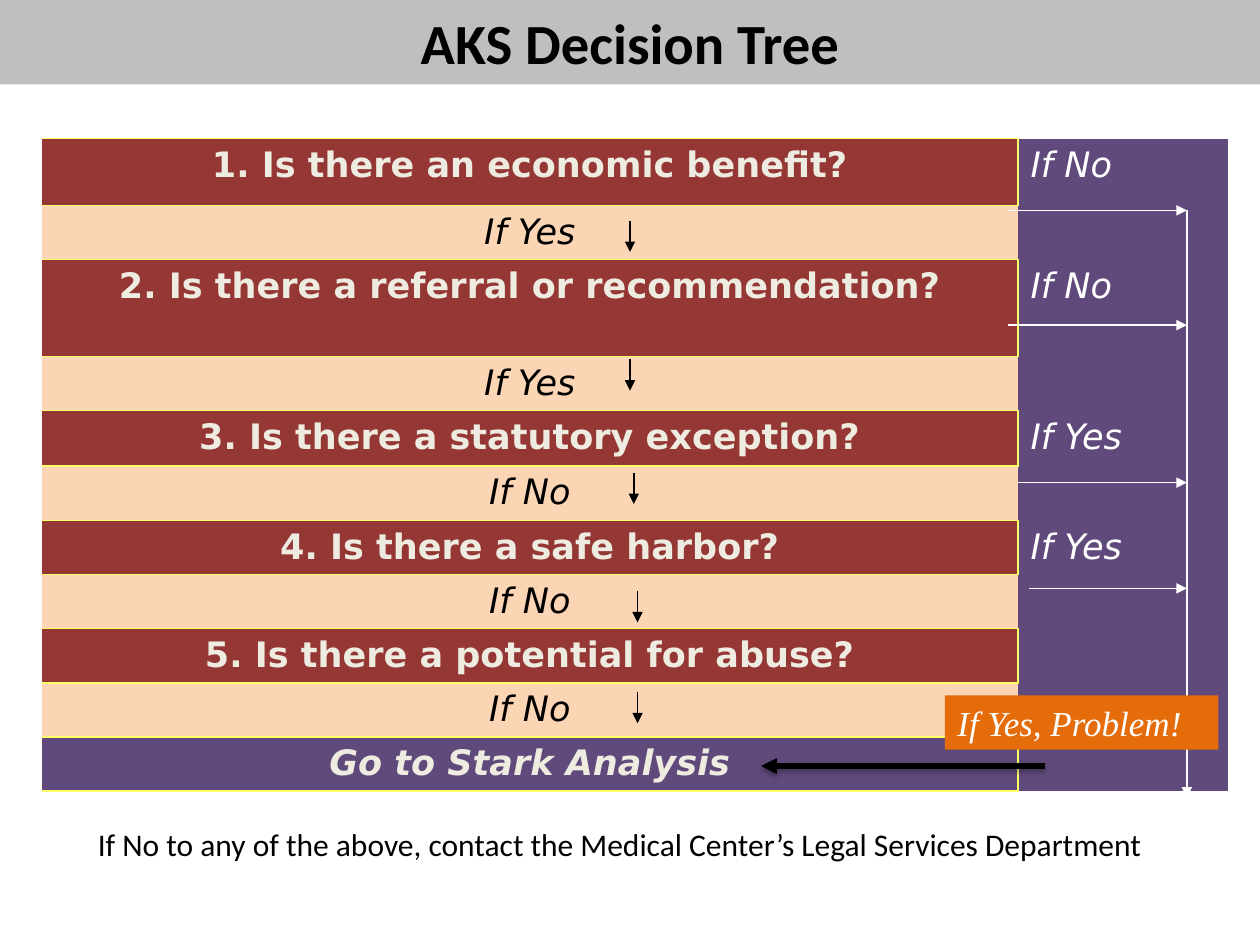
from lxml import etree
from pptx import Presentation
from pptx.dml.color import RGBColor
from pptx.enum.shapes import MSO_CONNECTOR, MSO_SHAPE
from pptx.enum.text import MSO_ANCHOR, PP_ALIGN
from pptx.oxml.ns import qn
from pptx.util import Inches, Pt

LEFT, CENTER = PP_ALIGN.LEFT, PP_ALIGN.CENTER
TOP, MIDDLE = MSO_ANCHOR.TOP, MSO_ANCHOR.MIDDLE

# Content
TITLE = "AKS Decision Tree"
FOOTNOTE = ("If No to any of the above, contact the Medical Center’s "
            "Legal Services Department")
CALLOUT = "If Yes, Problem!"
ROWS = [  # kind, step, side exit, height
    ("question", "1. Is there an economic benefit?", "If No", 0.53),
    ("answer", "If Yes", "", 0.43),
    ("question", "2. Is there a referral or recommendation?", "If No", 0.77),
    ("answer", "If Yes", "", 0.43),
    ("question", "3. Is there a statutory exception?", "If Yes", 0.44),
    ("answer", "If No", "", 0.43),
    ("question", "4. Is there a safe harbor?", "If Yes", 0.43),
    ("answer", "If No", "", 0.43),
    ("question", "5. Is there a potential for abuse?", "", 0.43),
    ("answer", "If No", "", 0.43),
    ("result", "Go to Stark Analysis", "", 0.43),
]
COLUMNS = [7.75, 1.67]
DOWN_ARROWS = [(5, 1.75), (5, 2.85), (5.03, 3.75), (5.06, 4.69), (5.06, 5.49)]
EXIT_ARROWS = [(8, 1.67), (8, 2.58), (8.08, 3.83), (8.17, 4.67)]
EXIT_X, EXIT_BOTTOM = 9.42, 6.33
DOWN_LENGTH = 0.25

# Colours and formats
WHITE, BLACK, CREAM = "FFFFFF", "000000", "EEECE1"
PURPLE, YELLOW, ORANGE, GREY = "604A7B", "FFFF66", "E46C0A", "BFBFBF"
CELL_FONT = {"name": "DejaVu Sans", "size": Pt(20)}
STYLES = {  # fill, text colour, font, yellow borders
    "question": ("953735", CREAM, {"bold": True, "italic": False}, "RTB"),
    "answer": ("FCD5B5", BLACK, {"bold": False, "italic": True}, "TB"),
    "result": (PURPLE, CREAM, {"bold": True, "italic": True}, "RTB"),
}
SIDE_FONT = {"bold": False, "italic": True}


def color(value):
    return RGBColor.from_string(value)


def paint(target, value):
    target.fill.solid()
    target.fill.fore_color.rgb = color(value)


def write(frame, text, font, text_color, align=LEFT):
    paragraph = frame.paragraphs[0]
    paragraph.alignment = align
    run = paragraph.add_run()
    run.text = text
    for name, value in font.items():
        setattr(run.font, name, value)
    run.font.color.rgb = color(text_color)


def set_borders(cell, yellow_sides):
    properties = cell._tc.get_or_add_tcPr()
    for side in "LRTB":
        line = etree.SubElement(properties, qn("a:ln" + side), w=str(Pt(1)))
        if side in yellow_sides:
            fill = etree.SubElement(line, qn("a:solidFill"))
            etree.SubElement(fill, qn("a:srgbClr"), val=YELLOW)
        else:
            etree.SubElement(line, qn("a:noFill"))


def add_arrow(start, end, line_color, width=1, shadow=False):
    points = [Inches(value) for value in (*start, *end)]
    arrow = slide.shapes.add_connector(MSO_CONNECTOR.STRAIGHT, *points)
    arrow.line.color.rgb = color(line_color)
    arrow.line.width = Pt(width)
    etree.SubElement(arrow.line._get_or_add_ln(), qn("a:tailEnd"), type="triangle")
    effects = etree.SubElement(arrow._element.spPr, qn("a:effectLst"))
    if shadow:
        outer = etree.SubElement(effects, qn("a:outerShdw"), blurRad=str(Pt(3.1)),
                                 dist=str(Pt(1.8)), dir="5400000", rotWithShape="0")
        shade = etree.SubElement(outer, qn("a:srgbClr"), val=BLACK)
        etree.SubElement(shade, qn("a:alpha"), val="35000")


presentation = Presentation()
presentation.slide_width, presentation.slide_height = Inches(10), Inches(7.5)
slide = presentation.slides.add_slide(presentation.slide_layouts[5])

# Title band
title = slide.shapes.title
title.left, title.top, title.width, title.height = 0, 0, Inches(10), Inches(0.67)
paint(title, GREY)
title.text_frame.vertical_anchor = MIDDLE
write(title.text_frame, TITLE, {"name": "Calibri", "size": Pt(32.4), "bold": True},
      BLACK, CENTER)

# Decision table
table = slide.shapes.add_table(
    len(ROWS), len(COLUMNS), Inches(0.33), Inches(1.1),
    Inches(sum(COLUMNS)), Inches(sum(row[-1] for row in ROWS))).table
table.first_row = table.horz_banding = False
for column, width in zip(table.columns, COLUMNS):
    column.width = Inches(width)
for index, (kind, step, side_exit, height) in enumerate(ROWS):
    table.rows[index].height = Inches(height)
    fill, text_color, font, borders = STYLES[kind]
    step_cell, side_cell = table.cell(index, 0), table.cell(index, 1)
    set_borders(step_cell, borders)
    set_borders(side_cell, "" if kind == "answer" else "L")
    paint(step_cell, fill)
    paint(side_cell, PURPLE)
    write(step_cell.text_frame, step, CELL_FONT | font, text_color, CENTER)
    if side_exit:
        write(side_cell.text_frame, side_exit, CELL_FONT | SIDE_FONT, WHITE)

# Arrows between steps and out to the exit line
add_arrow((EXIT_X, EXIT_ARROWS[0][1]), (EXIT_X, EXIT_BOTTOM), WHITE)
for x, y in DOWN_ARROWS:
    add_arrow((x, y), (x, y + DOWN_LENGTH), BLACK)
for x, y in EXIT_ARROWS:
    add_arrow((x, y), (EXIT_X, y), WHITE)

# Problem callout and the arrow to the result
callout = slide.shapes.add_shape(MSO_SHAPE.RECTANGLE, Inches(7.5), Inches(5.52),
                                 Inches(2.17), Inches(0.43))
callout.shadow.inherit = False
paint(callout, ORANGE)
callout.line.fill.background()
callout.text_frame.vertical_anchor = TOP
write(callout.text_frame, CALLOUT,
      {"name": "Times New Roman", "size": Pt(20), "italic": True}, WHITE)
add_arrow((8.29, 6.08), (6.04, 6.08), BLACK, width=3, shadow=True)

# Footnote
footnote = slide.shapes.add_textbox(Inches(0.42), Inches(6.5), Inches(9), Inches(0.4))
footnote.text_frame.word_wrap = True
write(footnote.text_frame, FOOTNOTE, {"name": "Calibri", "size": Pt(18)}, BLACK, CENTER)

presentation.save("out.pptx")
